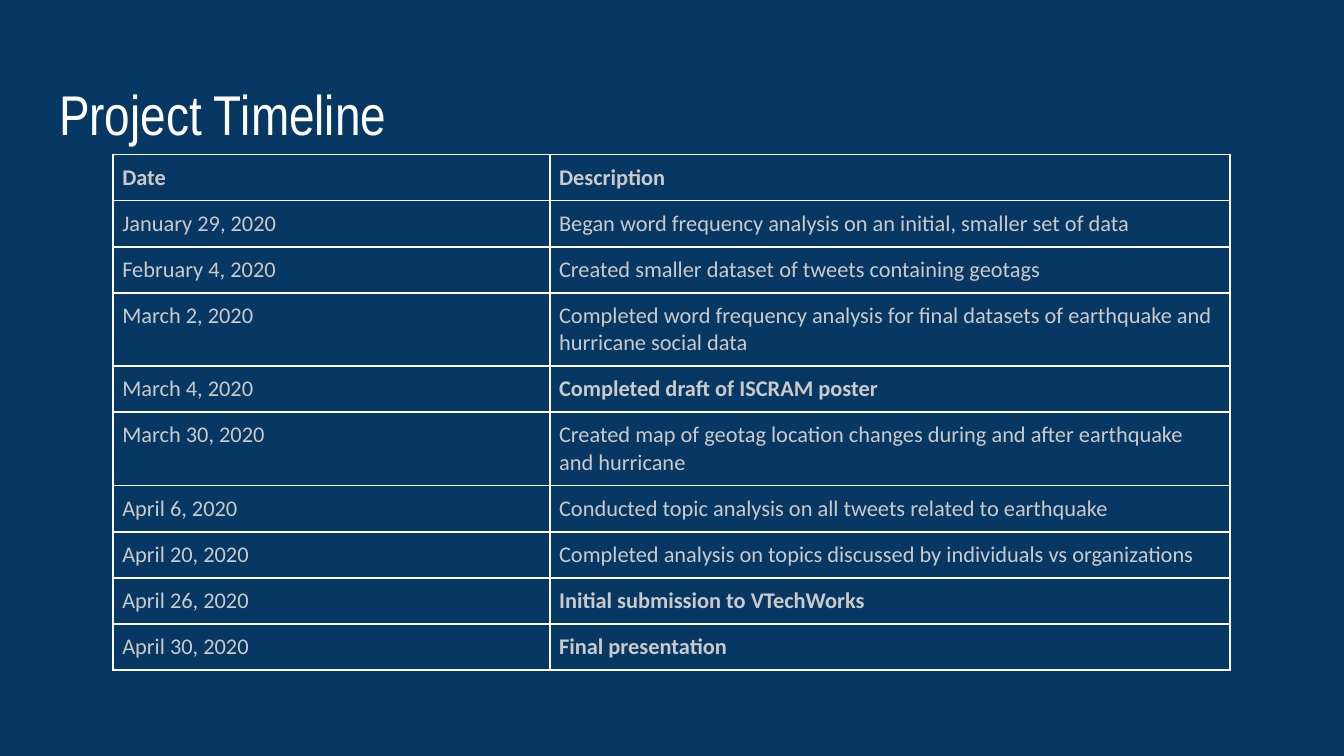
from dataclasses import dataclass

from lxml.etree import SubElement as Sub
from pptx import Presentation
from pptx.dml.color import RGBColor as Rgb
from pptx.enum.text import MSO_ANCHOR as Anchor, MSO_AUTO_SIZE as Fit, PP_ALIGN as Align
from pptx.oxml.ns import qn
from pptx.util import Inches, Pt


@dataclass(frozen=True)
class Theme:
    back: str = "073763"
    white: str = "FFFFFF"
    grey: str = "CACACA"
    head: str = "Arial Narrow"
    body: str = "Calibri"
    big: int = 30
    small: int = 12
    rule: int = 1


@dataclass(frozen=True)
class Step:
    date: str
    text: str
    bold: bool = False  # milestone description
    lines: int = 1


THEME = Theme()
WIDTHS = (3.25, 5.06)
PAD = 0.07
LINE = 0.2

STEPS = (
    Step("January 29, 2020", "Began word frequency analysis on an initial, smaller set of data"),
    Step("February 4, 2020", "Created smaller dataset of tweets containing geotags"),
    Step("March 2, 2020", "Completed word frequency analysis for final datasets of "
         "earthquake and hurricane social data", lines=2),
    Step("March 4, 2020", "Completed draft of ISCRAM poster", True),
    Step("March 30, 2020", "Created map of geotag location changes during and after "
         "earthquake and hurricane", lines=2),
    Step("April 6, 2020", "Conducted topic analysis on all tweets related to earthquake"),
    Step("April 20, 2020", "Completed analysis on topics discussed by individuals vs organizations"),
    Step("April 26, 2020", "Initial submission to VTechWorks", True),
    Step("April 30, 2020", "Final presentation", True),
)


def style(para, face: str, size: int, color: str, bold: bool = False) -> None:
    para.alignment = Align.LEFT
    font = para.font
    font.name, font.size, font.bold = face, Pt(size), bold
    font.color.rgb = Rgb.from_string(color)


def add_title(slide, text: str) -> None:
    title = slide.shapes.title
    title.left, title.top = Inches(0.34), Inches(0.49)
    title.width, title.height = Inches(9.32), Inches(0.63)
    frame = title.text_frame
    frame.text = text
    frame.word_wrap = True
    frame.auto_size = Fit.NONE
    frame.vertical_anchor = Anchor.TOP
    frame.margin_left = frame.margin_right = Inches(0.1)
    frame.margin_top = frame.margin_bottom = Inches(0.1)
    style(frame.paragraphs[0], THEME.head, THEME.big, THEME.white)


def fill_cell(cell, text: str, bold: bool) -> None:
    cell.text = text
    cell.vertical_anchor = Anchor.TOP
    cell.margin_left = cell.margin_right = Inches(PAD)
    cell.margin_top = cell.margin_bottom = Inches(PAD)
    style(cell.text_frame.paragraphs[0], THEME.body, THEME.small, THEME.grey, bold)
    # Borders come before the fill in the cell properties
    props = cell._tc.get_or_add_tcPr()
    for side in ("a:lnL", "a:lnR", "a:lnT", "a:lnB"):
        edge = Sub(props, qn(side), w=str(Pt(THEME.rule)))
        Sub(Sub(edge, qn("a:solidFill")), qn("a:srgbClr"), val=THEME.white)
    cell.fill.background()


def add_steps(slide, steps: tuple[Step, ...]) -> None:
    rows = (Step("Date", "Description", True), *steps)
    highs = [Inches(2 * PAD + LINE * step.lines) for step in rows]
    table = slide.shapes.add_table(
        len(rows), len(WIDTHS), Inches(0.84), Inches(1.15),
        Inches(sum(WIDTHS)), sum(highs)).table
    table.first_row = table.horz_banding = False
    for col, width in zip(table.columns, WIDTHS):
        col.width = Inches(width)
    for i, (step, high) in enumerate(zip(rows, highs)):
        table.rows[i].height = high
        fill_cell(table.cell(i, 0), step.date, i == 0)
        fill_cell(table.cell(i, 1), step.text, step.bold)


def main() -> None:
    deck = Presentation()
    # Widescreen, 16 by 9
    deck.slide_width, deck.slide_height = Inches(10), Inches(10 * 9 / 16)
    slide = deck.slides.add_slide(deck.slide_layouts[5])
    # Background
    fill = slide.background.fill
    fill.solid()
    fill.fore_color.rgb = Rgb.from_string(THEME.back)
    # Title and timeline
    add_title(slide, "Project Timeline")
    add_steps(slide, STEPS)
    deck.save("out.pptx")


if __name__ == "__main__":
    main()
